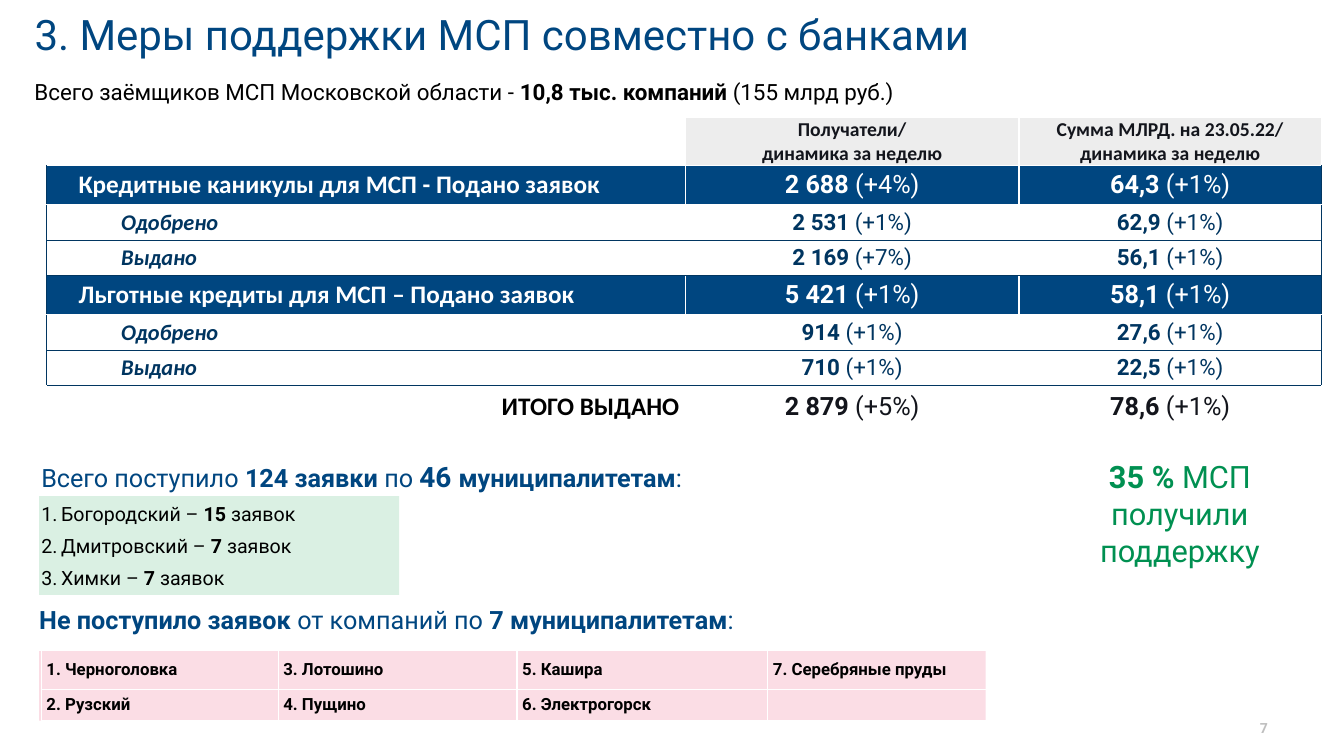
from dataclasses import dataclass
from typing import NamedTuple, Optional

from lxml.etree import SubElement
from pptx import Presentation
from pptx.dml.color import RGBColor
from pptx.enum.shapes import MSO_SHAPE as Preset
from pptx.enum.text import MSO_ANCHOR as Anchor, MSO_AUTO_SIZE as AutoSize, PP_ALIGN as Align
from pptx.oxml import parse_xml
from pptx.oxml.ns import nsdecls, qn
from pptx.util import Cm, Pt


@dataclass(frozen=True)
class Theme:
    sans: str = "Roboto"
    label: str = "Calibri"
    blue: str = "004680"
    navy: str = "003560"
    edge: str = "013661"
    ink: str = "13151C"
    black: str = "000000"
    white: str = "FFFFFF"
    header: str = "EDEDED"
    pink: str = "FBDDE5"
    mint: str = "DAF0E3"
    green: str = "009051"
    grey: str = "BFBFBF"
    title: int = 30
    share: int = 22
    accent: int = 20
    lead: int = 18
    detail: int = 16
    small: int = 14
    cell: int = 12
    page: int = 10


THEME = Theme()


class Box(NamedTuple):
    left: float
    top: float
    width: float
    height: float

    def lengths(self) -> list:
        return [Cm(value) for value in self]


class Style(NamedTuple):
    size: int
    color: str
    font: str = THEME.sans


class Part(NamedTuple):
    text: str
    bold: bool = False
    size: Optional[int] = None
    italic: bool = False


class RowLook(NamedTuple):
    height: float
    size: int
    label_color: str
    value_color: str
    fill: Optional[str] = None
    indent: float = 0
    italic: bool = False
    rule: str = THEME.white
    side: str = THEME.edge
    align: Align = Align.LEFT


class Measure(NamedTuple):
    look: RowLook
    label: str
    recipients: tuple
    amount: tuple


class Note(NamedTuple):
    box: Box
    style: Style
    lines: list
    align: Align = Align.LEFT
    wrap: bool = True


LEAD = RowLook(0.99, THEME.lead, THEME.white, THEME.white, THEME.blue, 0.71)
DETAIL = RowLook(0.89, THEME.detail, THEME.navy, THEME.navy, None, 1.78, True, THEME.edge)
TOTAL = RowLook(1.04, THEME.lead, THEME.black, THEME.ink, side=THEME.white, align=Align.RIGHT)

HEADER_HEIGHT = 1.2
HEADINGS = ["", "Получатели/\nдинамика за неделю", "Сумма МЛРД. на 23.05.22/\nдинамика за неделю"]
MEASURES = [
    Measure(LEAD, "Кредитные каникулы для МСП - Подано заявок", ("2 688", "+4%"), ("64,3", "+1%")),
    Measure(DETAIL, "Одобрено", ("2 531", "+1%"), ("62,9", "+1%")),
    Measure(DETAIL, "Выдано", ("2 169", "+7%"), ("56,1", "+1%")),
    Measure(LEAD, "Льготные кредиты для МСП – Подано заявок", ("5 421", "+1%"), ("58,1", "+1%")),
    Measure(DETAIL, "Одобрено", ("914", "+1%"), ("27,6", "+1%")),
    Measure(DETAIL, "Выдано", ("710", "+1%"), ("22,5", "+1%")),
    Measure(TOTAL, "ИТОГО ВЫДАНО", ("2 879", "+5%"), ("78,6", "+1%")),
]
APPLICANTS = [("Богородский", 15), ("Дмитровский", 7), ("Химки", 7)]
SILENT = ["Черноголовка", "Рузский", "Лотошино", "Пущино", "Кашира", "Электрогорск", "Серебряные пруды"]
PANELS = [(Box(0.99, 16.41, 23.85, 1.75), THEME.pink), (Box(0.99, 12.5, 9.07, 2.49), THEME.mint)]
NOTES = [
    Note(Box(0.86, 15.11, 24.1, 1.04), Style(THEME.lead, THEME.blue),
         [[Part("Не поступило заявок ", True), Part("от компаний по "),
           Part("7 муниципалитетам", True), Part(":")]]),
    Note(Box(0.74, 1.85, 26.29, 0.91), Style(THEME.detail, THEME.black),
         [[Part("Всего заёмщиков МСП Московской области - "),
           Part("10,8 тыс. компаний", True), Part(" (155 млрд руб.)")]]),
    Note(Box(25.2, 11.4, 9.07, 3.1), Style(THEME.share, THEME.green),
         [[Part("35 %", True), Part(" МСП")], [Part("получили")], [Part("поддержку")]], Align.CENTER),
    Note(Box(31.55, 18.01, 0.53, 0.69), Style(THEME.page, THEME.grey),
         [[Part("7", True)]], Align.RIGHT, False),
]


def write(paragraph, parts: list, style: Style, align: Align = Align.LEFT) -> None:
    paragraph.alignment = align
    for part in parts:
        run = paragraph.add_run()
        run.text = part.text
        run.font.name, run.font.size = style.font, Pt(part.size or style.size)
        run.font.bold, run.font.italic = part.bold, part.italic
        run.font.color.rgb = RGBColor.from_string(style.color)


def write_lines(frame, lines: list, style: Style, align: Align = Align.LEFT) -> None:
    for index, parts in enumerate(lines):
        write(frame.add_paragraph() if index else frame.paragraphs[0], parts, style, align)


def set_insets(target, inset: float) -> None:
    target.margin_left = target.margin_right = Cm(inset)
    target.margin_top = target.margin_bottom = Cm(inset)


def place(shape, box: Box) -> None:
    shape.left, shape.top, shape.width, shape.height = box.lengths()
    set_insets(shape.text_frame, 0.13)
    shape.text_frame.auto_size = AutoSize.NONE


def set_list_mark(paragraph, hang: float, mark: str) -> None:
    props = paragraph._p.get_or_add_pPr()
    props.set("marL", str(Cm(hang)))
    props.set("indent", str(-Cm(hang)))
    props.append(parse_xml(f"<a:{mark} {nsdecls('a')}/>"))


def set_borders(cell, left: str, right: str, top: str, bottom: str) -> None:
    props = cell._tc.get_or_add_tcPr()
    for index, (side, color) in enumerate(zip("LRTB", (left, right, top, bottom))):
        width = Pt(0.5 if color == THEME.edge else 1)
        props.insert(index, parse_xml(
            f'<a:ln{side} {nsdecls("a")} w="{width}"><a:solidFill>'
            f'<a:srgbClr val="{color}"/></a:solidFill></a:ln{side}>'))


def paint(cell, color: Optional[str], inset: float) -> None:
    cell.vertical_anchor = Anchor.MIDDLE
    set_insets(cell, inset)
    if color:
        cell.fill.solid()
        cell.fill.fore_color.rgb = RGBColor.from_string(color)
    else:
        cell.fill.background()


def add_grid(slide, left: float, top: float, widths: list, heights: list):
    box = Box(left, top, sum(widths), sum(heights))
    grid = slide.shapes.add_table(len(heights), len(widths), *box.lengths()).table
    grid.first_row = grid.horz_banding = False
    for column, width in zip(grid.columns, widths):
        column.width = Cm(width)
    for row, height in zip(grid.rows, heights):
        row.height = Cm(height)
    return grid


def add_measures(slide) -> None:
    heights = [HEADER_HEIGHT] + [measure.look.height for measure in MEASURES]
    grid = add_grid(slide, 1.17, 2.97, [16.1, 8.41, 7.62], heights)
    for col, heading in enumerate(HEADINGS):
        cell = grid.cell(0, col)
        paint(cell, THEME.header if heading else None, 0)
        lines = [[Part(line, True)] for line in heading.splitlines()]
        write_lines(cell.text_frame, lines, Style(THEME.small, THEME.ink, THEME.label), Align.CENTER)
    rule_above = THEME.white
    for row, (look, label, *figures) in enumerate(MEASURES, start=1):
        for col in range(3):
            cell = grid.cell(row, col)
            paint(cell, look.fill, 0.15 if look is TOTAL and col == 0 else 0.1)
            set_borders(cell, THEME.white if col else look.side,
                        look.side if col == 2 else THEME.white, rule_above, look.rule)
        name = grid.cell(row, 0).text_frame.paragraphs[0]
        name._p.get_or_add_pPr().set("marL", str(Cm(look.indent)))
        write(name, [Part(label, True, italic=look.italic)],
              Style(look.size, look.label_color, THEME.label), look.align)
        for col, (value, change) in enumerate(figures, start=1):
            write(grid.cell(row, col).text_frame.paragraphs[0],
                  [Part(f"{value} ", True), Part(f"({change})")],
                  Style(look.size, look.value_color), Align.CENTER)
        rule_above = look.rule


def add_silent(slide) -> None:
    """Number the municipalities down each column of two."""
    grid = add_grid(slide, 1.04, 16.36, [5.97, 6.02, 6.32, 7.47], [1.02, 0.76])
    for index in range(8):
        cell = grid.cell(index % 2, index // 2)
        paint(cell, None, 0.13)
        set_borders(cell, *[THEME.white] * 4)
        paragraph = cell.text_frame.paragraphs[0]
        if index < len(SILENT):
            write(paragraph, [Part(f"{index + 1}. {SILENT[index]}", True)], Style(THEME.cell, THEME.black))
        else:
            SubElement(paragraph._p, qn("a:endParaRPr")).set("sz", str(THEME.cell * 100))


def fill_placeholders(slide) -> None:
    title, body = slide.placeholders
    place(title, Box(0.74, -0.53, 30.99, 2.16))
    title.text_frame.vertical_anchor = Anchor.BOTTOM
    heading = title.text_frame.paragraphs[0]
    heading.line_spacing = 0.9
    write(heading, [Part("3. Меры поддержки МСП совместно с банками")], Style(THEME.title, THEME.blue))

    place(body, Box(0.91, 11.46, 24.64, 3.53))
    intro = body.text_frame.paragraphs[0]
    set_list_mark(intro, 0, "buNone")
    intro.space_before = Pt(0)
    write(intro, [Part("Всего поступило "), Part("124 заявки ", True), Part("по "),
                  Part("46 ", True, THEME.accent), Part("муниципалитетам", True), Part(":")],
          Style(THEME.lead, THEME.blue))
    for town, count in APPLICANTS:
        item = body.text_frame.add_paragraph()
        set_list_mark(item, 0.5, 'buAutoNum type="arabicPeriod"')
        item.space_before = Pt(6)
        write(item, [Part(f"{town} – "), Part(str(count), True), Part(" заявок")],
              Style(THEME.small, THEME.black))


def add_panel(slide, box: Box, color: str) -> None:
    panel = slide.shapes.add_shape(Preset.RECTANGLE, *box.lengths())
    panel.shadow.inherit = False
    panel.fill.solid()
    panel.fill.fore_color.rgb = RGBColor.from_string(color)
    panel.line.fill.background()
    # Panels lie behind the placeholders.
    slide.shapes._spTree.insert(2, panel._element)


def add_note(slide, note: Note) -> None:
    shape = slide.shapes.add_textbox(*note.box.lengths())
    place(shape, note.box)
    shape.text_frame.word_wrap = note.wrap
    write_lines(shape.text_frame, note.lines, note.style, note.align)


def main() -> None:
    deck = Presentation()
    deck.slide_width, deck.slide_height = Cm(33.87), Cm(19.05)
    slide = deck.slides.add_slide(deck.slide_layouts[1])
    fill_placeholders(slide)
    for box, color in PANELS:
        add_panel(slide, box, color)
    add_measures(slide)
    for note in NOTES:
        add_note(slide, note)
    add_silent(slide)
    deck.save("out.pptx")


if __name__ == "__main__":
    main()
